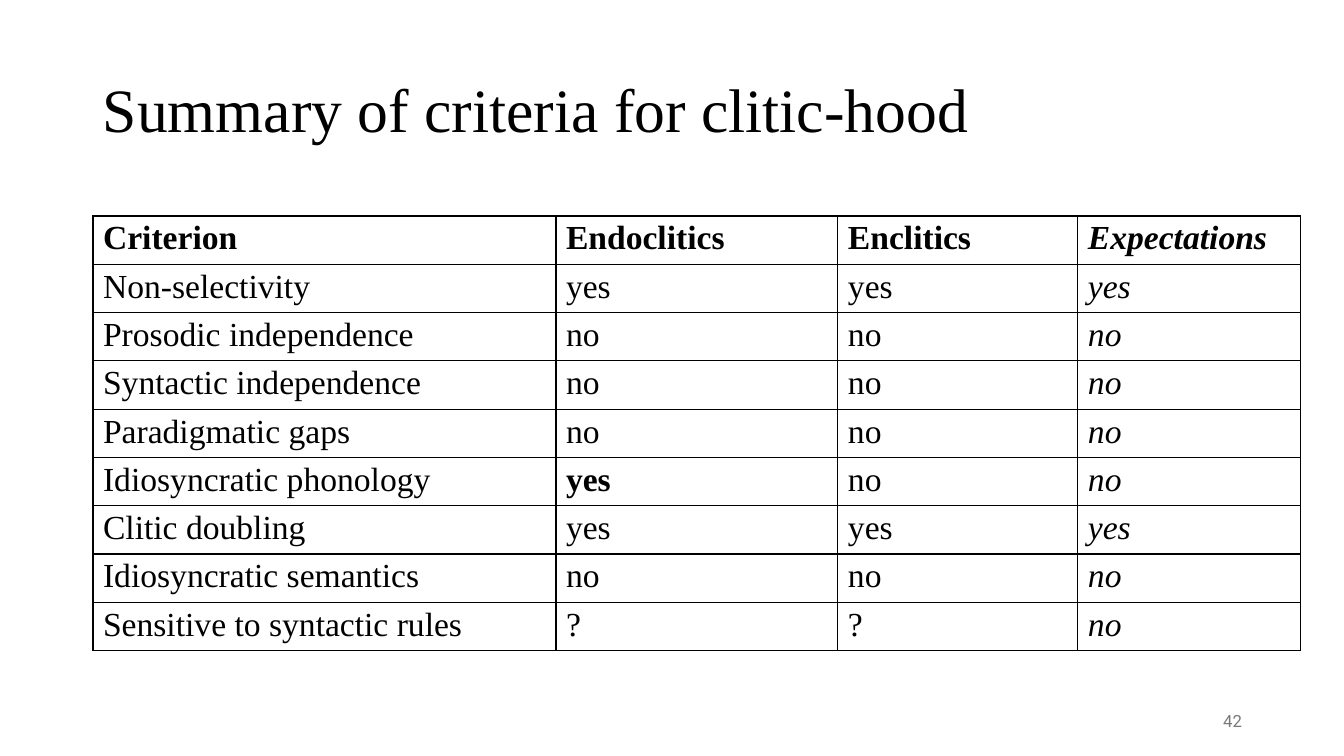
from lxml.etree import SubElement
from pptx import Presentation
from pptx.dml.color import RGBColor
from pptx.enum.text import MSO_ANCHOR as Anchor, PP_ALIGN as Align
from pptx.oxml.ns import qn
from pptx.util import Emu, Pt

EMU_PER_INCH = 914400
PX_PER_INCH = 100.8
SERIF, SANS = "Times New Roman", "Roboto"
BLACK, GREY = "000000", "797979"

COLUMN_WIDTHS = [463, 282, 240, 223]
CRITERIA = [
    ("Criterion", "Endoclitics", "Enclitics", "Expectations"),
    ("Non-selectivity", "yes", "yes", "yes"),
    ("Prosodic independence", "no", "no", "no"),
    ("Syntactic independence", "no", "no", "no"),
    ("Paradigmatic gaps", "no", "no", "no"),
    ("Idiosyncratic phonology", "yes", "no", "no"),
    ("Clitic doubling", "yes", "yes", "yes"),
    ("Idiosyncratic semantics", "no", "no", "no"),
    ("Sensitive to syntactic rules", "?", "?", "no"),
]
EXPECTATIONS_COLUMN = 3
UNEXPECTED_CELL = (5, 1)


def px(length):
    return Emu(round(length * EMU_PER_INCH / PX_PER_INCH))


def color(hex_code):
    return RGBColor.from_string(hex_code)


def add_run(paragraph, text, size, font=SERIF, hex_code=BLACK, bold=False, italic=False):
    run = paragraph.add_run()
    run.text = text
    run.font.name = font
    run.font.size = Pt(size)
    run.font.bold = bold
    run.font.italic = italic
    run.font.color.rgb = color(hex_code)


def add_text(slide, box, text, size, align=Align.LEFT, spacing=1.0, **style):
    shape = slide.shapes.add_textbox(*map(px, box))
    frame = shape.text_frame
    frame.word_wrap = True
    frame.vertical_anchor = Anchor.MIDDLE
    paragraph = frame.paragraphs[0]
    paragraph.alignment = align
    paragraph.line_spacing = spacing
    add_run(paragraph, text, size, **style)


def set_borders(cell, hex_code=BLACK, width=1):
    properties = cell._tc.get_or_add_tcPr()
    for side in ("a:lnL", "a:lnR", "a:lnT", "a:lnB"):
        line = SubElement(properties, qn(side), w=str(Pt(width)))
        fill = SubElement(line, qn("a:solidFill"))
        SubElement(fill, qn("a:srgbClr"), val=hex_code)


def add_criteria_table(slide, left, top, height):
    width = sum(COLUMN_WIDTHS)
    table = slide.shapes.add_table(
        len(CRITERIA), len(COLUMN_WIDTHS), px(left), px(top), px(width), px(height)
    ).table
    table.first_row = table.horz_banding = False
    for column, column_width in zip(table.columns, COLUMN_WIDTHS):
        column.width = px(column_width)
    for row_index, words in enumerate(CRITERIA):
        table.rows[row_index].height = px(height / len(CRITERIA))
        for column_index, word in enumerate(words):
            cell = table.cell(row_index, column_index)
            set_borders(cell)
            cell.fill.background()
            cell.margin_top = cell.margin_bottom = px(4)
            add_run(
                cell.text_frame.paragraphs[0], word, 24,
                bold=row_index == 0 or (row_index, column_index) == UNEXPECTED_CELL,
                italic=column_index == EXPECTATIONS_COLUMN,
            )


def main():
    presentation = Presentation()
    presentation.slide_width, presentation.slide_height = px(1344), px(756)
    slide = presentation.slides.add_slide(presentation.slide_layouts[6])

    # Title
    add_text(slide, (93, 40, 1159, 146), "Summary of criteria for clitic-hood", 44, spacing=0.9)

    # Table of criteria
    add_criteria_table(slide, left=93, top=216, height=426)

    # Page number
    add_text(slide, (950, 701, 302, 40), "42", 12, Align.RIGHT, font=SANS, hex_code=GREY)

    presentation.save("out.pptx")


if __name__ == "__main__":
    main()
